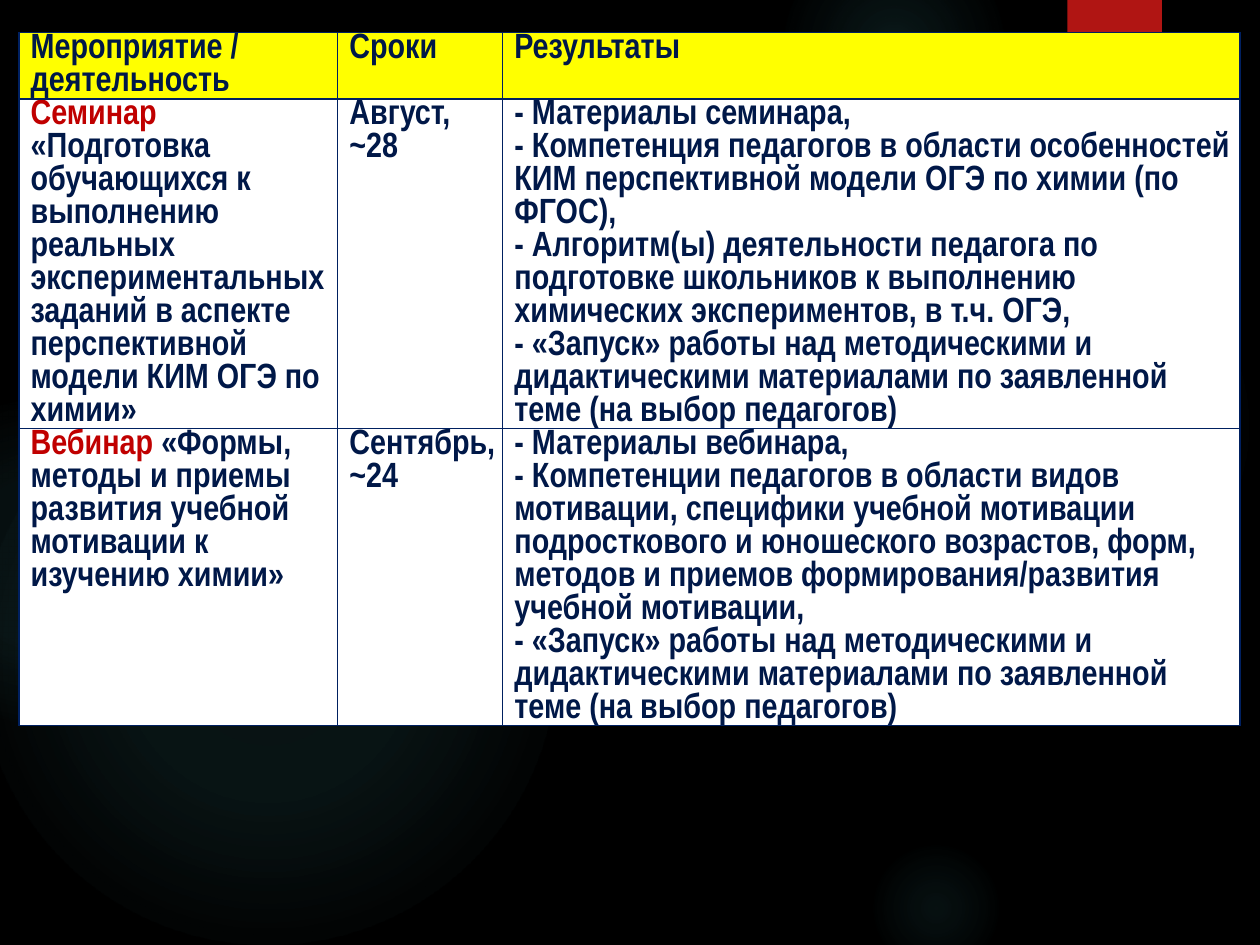
from lxml.etree import SubElement
from pptx import Presentation
from pptx.dml.color import RGBColor
from pptx.enum.shapes import MSO_SHAPE
from pptx.oxml import parse_xml
from pptx.oxml.ns import nsdecls, qn
from pptx.util import Pt

BLACK = RGBColor(0x00, 0x00, 0x00)
WHITE = RGBColor(0xFF, 0xFF, 0xFF)
YELLOW = RGBColor(0xFF, 0xFF, 0x00)
NAVY = RGBColor(0x00, 0x18, 0x48)
BORDER = RGBColor(0x00, 0x20, 0x60)
RED = RGBColor(0xC0, 0x00, 0x00)
TAB_RED = RGBColor(0xB0, 0x15, 0x13)
GLOW = RGBColor(0x50, 0xB9, 0xC1)

# Each glow: left, top, diameter, then (position %, opacity %) stops
GLOWS = [
    (496, 132, 222, [(0, 7), (36, 6), (69, 0)]),
    (448, -36, 126, [(0, 14), (36, 7), (73, 0)]),
    (496, 480, 78, [(0, 9), (36, 5), (66, 0)]),
    (-12, 210, 330, [(0, 11), (36, 10), (75, 0)]),
    (-66, 228, 186, [(0, 8), (36, 8), (72, 0)]),
]

LAUNCH = ("- «Запуск» работы над методическими и дидактическими материалами "
          "по заявленной теме (на выбор педагогов)")

# Each cell is a list of paragraphs; a tuple holds a red lead and the rest
ROWS = [
    [["Мероприятие / деятельность"], ["Сроки"], ["Результаты"]],
    [
        [("Семинар ", "«Подготовка обучающихся к выполнению реальных "
          "экспериментальных заданий в аспекте перспективной модели "
          "КИМ ОГЭ по химии»")],
        ["Август,", "~28"],
        ["- Материалы семинара,",
         "- Компетенция педагогов в области особенностей КИМ перспективной "
         "модели ОГЭ по химии (по ФГОС),",
         "- Алгоритм(ы) деятельности педагога по подготовке школьников "
         "к выполнению химических экспериментов, в т.ч. ОГЭ,",
         LAUNCH],
    ],
    [
        [("Вебинар", " «Формы, методы и приемы развития учебной мотивации "
          "к изучению химии»")],
        ["Сентябрь, ~24"],
        ["- Материалы вебинара,",
         "- Компетенции педагогов в области видов мотивации, специфики "
         "учебной мотивации подросткового и юношеского возрастов, форм, "
         "методов и приемов формирования/развития учебной мотивации,",
         LAUNCH],
    ],
]
COLUMN_WIDTHS = [182.2, 94.3, 421.2]
ROW_HEIGHTS = [37.5, 188.5, 169.5]


def add_plain_shape(slide, kind, left, top, width, height):
    shape = slide.shapes.add_shape(kind, Pt(left), Pt(top), Pt(width), Pt(height))
    shape.shadow.inherit = False
    shape.line.fill.background()
    return shape


def add_glow(slide, left, top, diameter, stops):
    shape = add_plain_shape(slide, MSO_SHAPE.OVAL, left, top, diameter, diameter)
    stop_xml = "".join(
        f'<a:gs pos="{position * 1000}"><a:srgbClr val="{GLOW}">'
        f'<a:alpha val="{opacity * 1000}"/></a:srgbClr></a:gs>'
        for position, opacity in stops)
    gradient = parse_xml(
        f'<a:gradFill {nsdecls("a")} rotWithShape="1"><a:gsLst>{stop_xml}</a:gsLst>'
        '<a:path path="circle"><a:fillToRect l="50000" t="50000" r="50000" '
        'b="50000"/></a:path></a:gradFill>')
    shape._element.spPr.find(qn("a:prstGeom")).addnext(gradient)


def set_borders(cell):
    properties = cell._tc.get_or_add_tcPr()
    for index, side in enumerate(("lnL", "lnR", "lnT", "lnB")):
        line = SubElement(properties, qn(f"a:{side}"), w=str(Pt(1)))
        solid = SubElement(line, qn("a:solidFill"))
        SubElement(solid, qn("a:srgbClr"), val=str(BORDER))
        properties.insert(index, line)


def fill_cell(cell, paragraphs, color):
    cell.fill.solid()
    cell.fill.fore_color.rgb = color
    set_borders(cell)
    cell.margin_left = cell.margin_right = Pt(0.7)
    cell.margin_top = cell.margin_bottom = 0
    frame = cell.text_frame
    for index, content in enumerate(paragraphs):
        paragraph = frame.add_paragraph() if index else frame.paragraphs[0]
        paragraph._p.get_or_add_pPr().set("marL", str(Pt(6)))
        font = paragraph.font
        font.name, font.size, font.bold = "Arial Narrow", Pt(20), True
        lead, rest = content if isinstance(content, tuple) else ("", content)
        for text, text_color in ((lead, RED), (rest, NAVY)):
            if text:
                run = paragraph.add_run()
                run.text = text
                run.font.color.rgb = text_color


def main():
    presentation = Presentation()
    presentation.slide_width, presentation.slide_height = Pt(720), Pt(540)
    slide = presentation.slides.add_slide(presentation.slide_layouts[6])

    # Background with soft glows and the red tab
    slide.background.fill.solid()
    slide.background.fill.fore_color.rgb = BLACK
    for glow in GLOWS:
        add_glow(slide, *glow)
    tab = add_plain_shape(slide, MSO_SHAPE.RECTANGLE, 610, 0, 54, 86.4)
    tab.fill.solid()
    tab.fill.fore_color.rgb = TAB_RED

    # Schedule table
    table = slide.shapes.add_table(
        len(ROWS), len(COLUMN_WIDTHS), Pt(10.8), Pt(18.7),
        Pt(sum(COLUMN_WIDTHS)), Pt(sum(ROW_HEIGHTS))).table
    for column, width in zip(table.columns, COLUMN_WIDTHS):
        column.width = Pt(width)
    for row_index, (row, height) in enumerate(zip(table.rows, ROW_HEIGHTS)):
        row.height = Pt(height)
        for cell, paragraphs in zip(row.cells, ROWS[row_index]):
            fill_cell(cell, paragraphs, WHITE if row_index else YELLOW)

    presentation.save("out.pptx")


if __name__ == "__main__":
    main()
